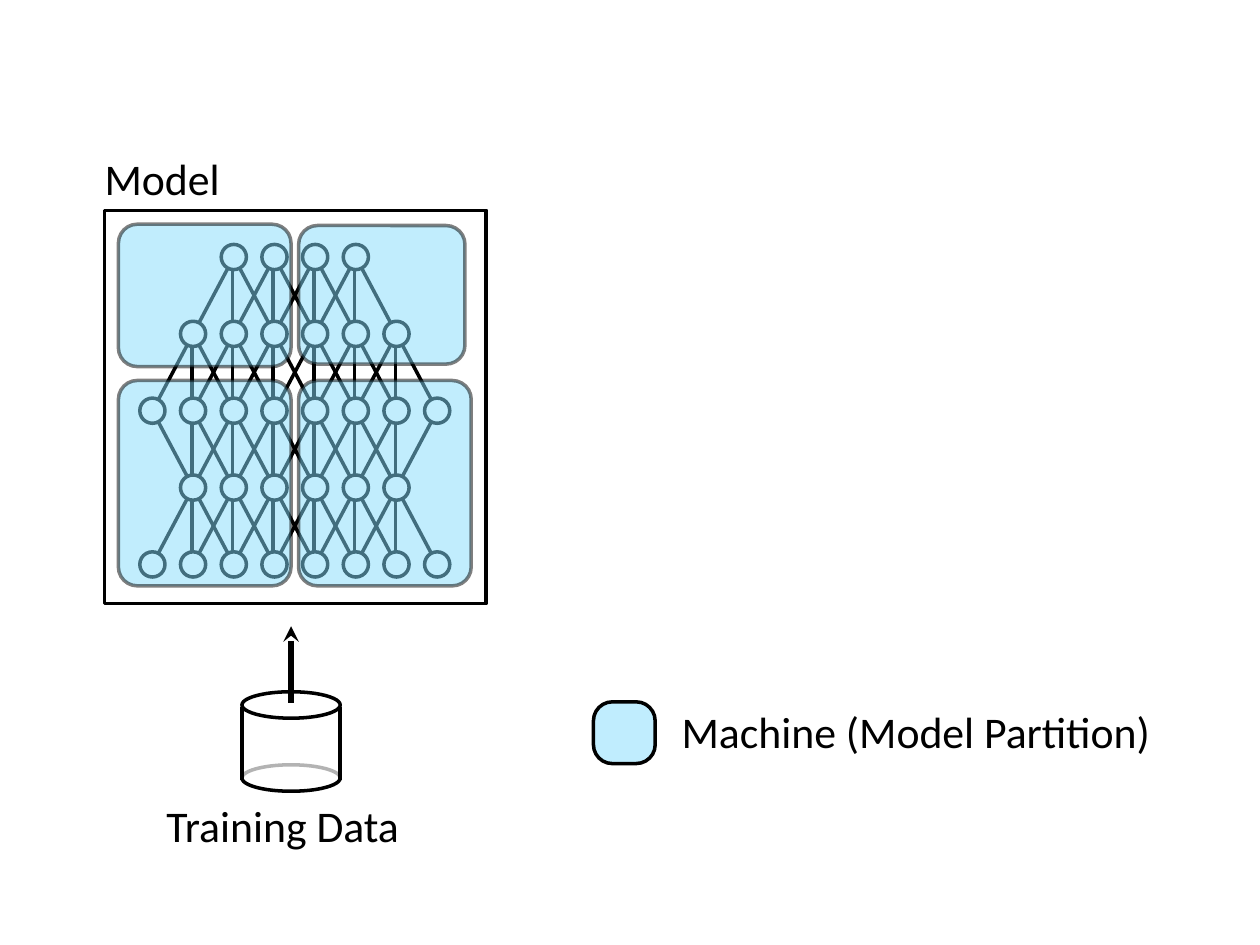
from dataclasses import dataclass

from lxml.etree import SubElement
from pptx import Presentation
from pptx.dml.color import RGBColor
from pptx.enum.shapes import MSO_CONNECTOR as Connector, MSO_SHAPE as Shape
from pptx.enum.text import MSO_ANCHOR as Anchor, MSO_AUTO_SIZE as AutoSize
from pptx.oxml.ns import qn
from pptx.util import Inches, Pt


@dataclass(frozen=True)
class Theme:
    """Colours, type and line weights of the slide."""
    ink: RGBColor = RGBColor(0, 0, 0)
    paper: RGBColor = RGBColor(255, 255, 255)
    machine: RGBColor = RGBColor(0x84, 0xDD, 0xFD)
    legend: RGBColor = RGBColor(0xC0, 0xED, 0xFE)
    font: str = "Calibri"
    label_size: float = 25
    line: float = 2
    arrow: float = 3


THEME = Theme()


@dataclass(frozen=True)
class Box:
    """A region in inches."""
    left: float
    top: float
    width: float
    height: float

    def inner(self, x, y, width, height):
        """Return a box placed relative to this one."""
        return Box(self.left + x, self.top + y, width, height)

    def lengths(self):
        """Return the box as lengths."""
        return [Inches(n) for n in (self.left, self.top, self.width, self.height)]


def add_figure(shapes, kind, box, fill=None, outlined=True, opacity=None, corner=None):
    """Draw a preset shape with an optional fill, outline and opacity."""
    figure = shapes.add_shape(kind, *box.lengths())
    figure.shadow.inherit = False
    if corner is not None:
        figure.adjustments[0] = corner / min(box.width, box.height)
    if fill is None:
        figure.fill.background()
    else:
        figure.fill.solid()
        figure.fill.fore_color.rgb = fill
    if outlined:
        figure.line.color.rgb = THEME.ink
        figure.line.width = Pt(THEME.line)
    else:
        figure.line.fill.background()
    if opacity is not None:
        for color in figure.element.spPr.iter(qn("a:srgbClr")):
            SubElement(color, qn("a:alpha"), val=str(opacity * 1000))
    return figure


def add_line(shapes, start, end, width=THEME.line, arrow=False):
    """Draw a straight line, with an arrowhead at its start if asked."""
    points = [Inches(n) for n in (*start, *end)]
    line = shapes.add_connector(Connector.STRAIGHT, *points)
    line.line.color.rgb = THEME.ink
    line.line.width = Pt(width)
    if arrow:
        SubElement(line.line._get_or_add_ln(), qn("a:headEnd"), type="stealth")
    SubElement(line.element.spPr, qn("a:effectLst"))


def add_label(shapes, box, text):
    """Write a one-line label."""
    frame = shapes.add_textbox(*box.lengths()).text_frame
    frame.margin_left = frame.margin_right = frame.margin_top = frame.margin_bottom = 0
    frame.vertical_anchor = Anchor.MIDDLE
    frame.word_wrap = False
    frame.auto_size = AutoSize.SHAPE_TO_FIT_TEXT
    span = frame.paragraphs[0].add_run()
    span.text = text
    span.font.name = THEME.font
    span.font.size = Pt(THEME.label_size)
    span.font.color.rgb = THEME.ink


def add_network(shapes, box, layers=(4, 6, 8, 6, 8), node=0.2):
    """Draw centred layers of nodes, each linked to its three neighbours."""
    column = (box.width - node) / (max(layers) - 1)
    row = (box.height - node) / (len(layers) - 1)
    middle = box.left + box.width / 2
    centres = [
        [(middle + (i - (count - 1) / 2) * column, box.top + node / 2 + level * row)
         for i in range(count)]
        for level, count in enumerate(layers)
    ]
    for upper, lower in zip(centres, centres[1:]):
        narrow, wide = sorted((upper, lower), key=len)
        for i, (x, y) in enumerate(narrow):
            for step, (far_x, far_y) in enumerate(wide[i:i + 3]):
                shift = 0.01 if step == 1 else 0
                add_line(shapes, (x - shift, y), (far_x - shift, far_y))
    for layer in centres:
        for x, y in layer:
            spot = Box(x - node / 2, y - node / 2, node, node)
            add_figure(shapes, Shape.OVAL, spot, THEME.paper)


def add_model(shapes, box):
    """Draw the model: its network, label, four machines and frame."""
    add_network(shapes.add_group_shape().shapes, box.inner(0.28, 0.27, 2.46, 2.64))
    add_label(shapes, box.inner(0, -0.47, 0.97, 0.43), "Model")
    machines = (
        (0.11, 0.11, 1.37, 1.13), (1.54, 0.12, 1.32, 1.1),
        (0.11, 1.35, 1.37, 1.63), (1.54, 1.35, 1.37, 1.63),
    )
    for place in machines:
        add_figure(shapes, Shape.ROUNDED_RECTANGLE, box.inner(*place),
                   THEME.machine, opacity=50, corner=0.15)
    add_figure(shapes, Shape.RECTANGLE, box)


def add_training_data(shapes, box):
    """Draw the data store, its arrow up to the model and its label."""
    drum = box.inner(0.6, 0.52, 0.78, 0.79)
    rim = 0.21
    add_figure(shapes, Shape.OVAL, drum.inner(0, drum.height - rim, drum.width, rim))
    add_figure(shapes, Shape.RECTANGLE, drum.inner(0, 0.13, drum.width, 0.55),
               THEME.paper, outlined=False, opacity=70)
    add_figure(shapes, Shape.OVAL, drum.inner(0, 0, drum.width, rim))
    for x in (drum.left, drum.left + drum.width):
        add_line(shapes, (x, drum.top + 0.12), (x, drum.top + 0.7))
    middle = drum.left + drum.width / 2
    add_line(shapes, (middle, box.top), (middle, box.top + 0.61), THEME.arrow, arrow=True)
    add_label(shapes, box.inner(0, 1.36, box.width, 0.43), "Training Data")


def add_legend(shapes, box):
    """Draw the key to the machine colour."""
    add_figure(shapes, Shape.ROUNDED_RECTANGLE, box.inner(0, 0, box.height, box.height),
               THEME.legend, corner=0.15)
    add_label(shapes, box.inner(0.7, 0.02, 4.04, 0.43), "Machine (Model Partition)")


def main():
    """Build and save the deck."""
    deck = Presentation()
    deck.slide_width, deck.slide_height = Inches(10), Inches(7.5)
    shapes = deck.slides.add_slide(deck.slide_layouts[6]).shapes
    add_model(shapes, Box(0.83, 1.67, 3.03, 3.12))
    add_training_data(shapes.add_group_shape().shapes, Box(1.32, 4.97, 2.12, 1.79))
    add_legend(shapes.add_group_shape().shapes, Box(4.71, 5.57, 4.74, 0.49))
    deck.save("out.pptx")


if __name__ == "__main__":
    main()
